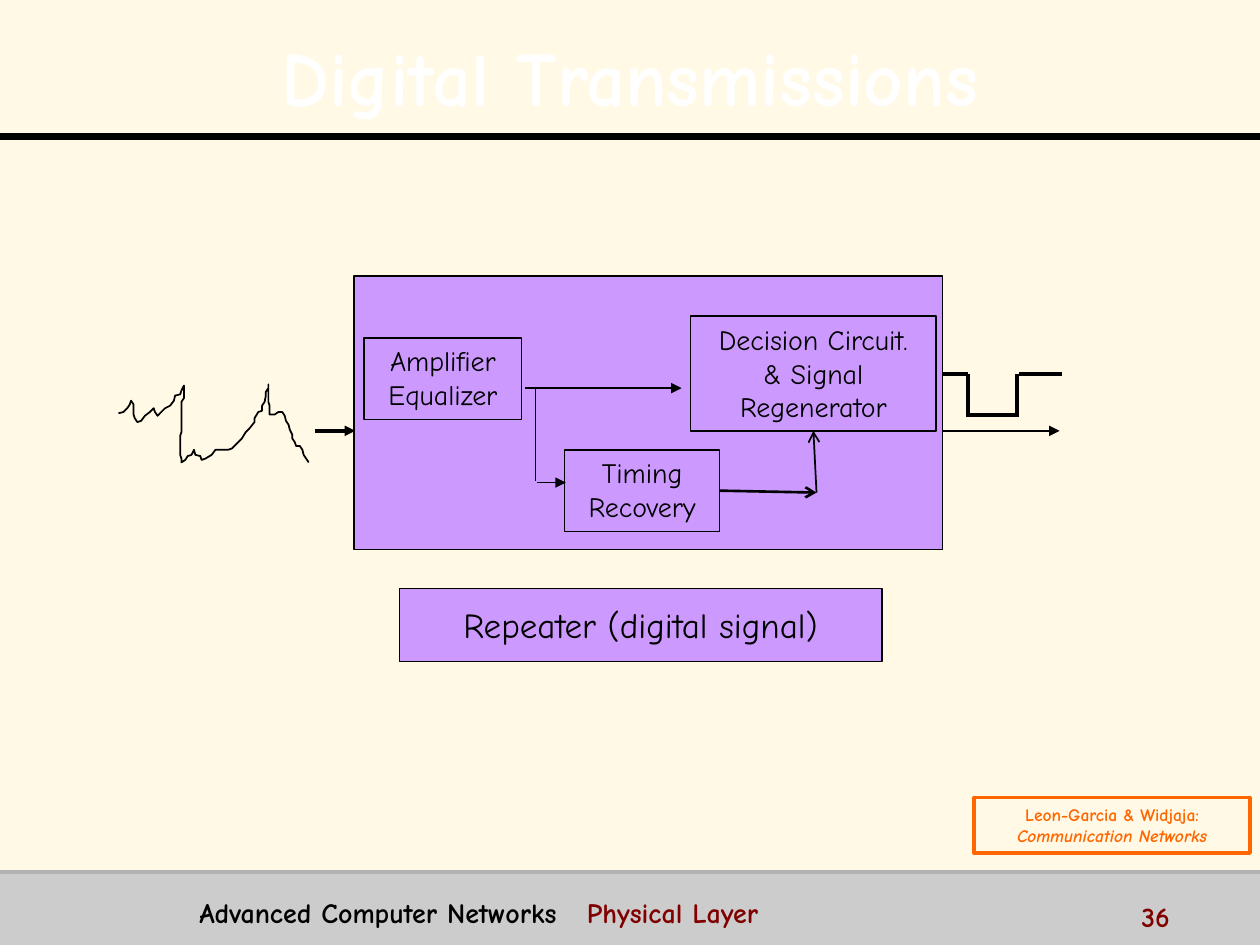
from lxml import etree
from pptx import Presentation
from pptx.dml.color import RGBColor
from pptx.enum.shapes import MSO_CONNECTOR, MSO_SHAPE
from pptx.enum.text import MSO_ANCHOR, PP_ALIGN
from pptx.oxml.ns import qn
from pptx.util import Pt

RECT, STRAIGHT = MSO_SHAPE.RECTANGLE, MSO_CONNECTOR.STRAIGHT
TOP, MIDDLE = MSO_ANCHOR.TOP, MSO_ANCHOR.MIDDLE
LEFT, CENTER = PP_ALIGN.LEFT, PP_ALIGN.CENTER
BOTTOM_SIDE, RIGHT_SIDE = 2, 3
FONT = "Comic Neue"
BLACK, WHITE, LILAC, MAROON, ORANGE = "000000", "FFFFFF", "CC99FF", "800000", "FF6600"

# Boxes: left, top, width, height
REPEATER = (202.3, 157.7, 336.2, 156.2)
AMPLIFIER = (208.1, 193, 90, 46.8), ["Amplifier", "Equalizer"]
TIMING = (322.6, 257, 88.6, 46.8), ["Timing", "Recovery"]
DECISION = (394.6, 180.7, 140.4, 65.5), ["Decision Circuit.", "& Signal", "Regenerator"]
CAPTION = (228.2, 336.2, 275.8, 41.8), ["Repeater (digital signal)"]
CITATION = (556.6, 455.8, 157.7, 31.7), ["Leon-Garcia & Widjaja:", "Communication Networks"]

# Lines: x1, y1, x2, y2, weight, arrowhead
SIGNAL_LINES = [
    (180, 246.2, 203, 246.2, 2, "triangle"),
    (528.5, 246.2, 605.5, 246.2, 1, "triangle"),
    (528.5, 213.8, 553, 213.8, 2.25, None),
    (553, 213.8, 553, 238.3, 2.25, None),
    (553, 236.9, 582.5, 236.9, 2.25, None),
    (581, 213.8, 581, 238.3, 2.25, None),
    (582.5, 213.8, 607, 213.8, 2.25, None),
]
INNER_LINES = [
    (300.2, 221.8, 389.5, 221.8, 1, "triangle"),
    (306, 221.8, 306, 275, 1, None),
    (306.7, 275.8, 323.3, 275.8, 1, "triangle"),
]
TIMING_CORNER = (466.6, 281.5)

# Noisy input signal, on a grid of 0.72 pt
NOISE_UNIT = 0.72
NOISE = [
    (94, 328), (98, 327), (101, 324), (103, 321), (104, 318), (106, 321), (106, 324),
    (106, 329), (107, 332), (109, 335), (112, 334), (115, 330), (119, 327), (122, 324),
    (123, 327), (125, 330), (128, 327), (131, 324), (135, 322), (138, 318), (139, 314),
    (143, 313), (144, 310), (146, 306), (146, 316), (144, 319), (144, 343), (143, 346),
    (143, 361), (144, 364), (144, 367), (147, 365), (149, 362), (152, 361), (154, 357),
    (155, 361), (159, 362), (160, 365), (163, 364), (168, 361), (171, 357), (181, 357),
    (184, 356), (187, 353), (192, 348), (195, 343), (198, 340), (202, 335), (202, 332),
    (205, 327), (208, 326), (208, 322), (210, 319), (211, 314), (211, 311), (213, 308),
    (213, 305), (213, 319), (214, 322), (214, 329), (218, 329), (221, 327), (224, 327),
    (226, 330), (227, 334), (229, 337), (230, 341), (232, 345), (232, 348), (234, 351),
    (235, 354), (238, 354), (240, 357), (241, 361), (243, 364), (245, 367),
]


def rgb(hex_code):
    return RGBColor.from_string(hex_code)


def set_font(font, size, color, bold=False):
    font.name, font.size, font.bold = FONT, Pt(size), bold
    font.color.rgb = rgb(color)


def add_box(place, fill=None, line=None, weight=1):
    box = shapes.add_shape(RECT, *map(Pt, place))
    box.shadow.inherit = False
    if fill:
        box.fill.solid()
        box.fill.fore_color.rgb = rgb(fill)
    else:
        box.fill.background()
    if line:
        box.line.color.rgb = rgb(line)
        box.line.width = Pt(weight)
    else:
        box.line.fill.background()
    return box


def write(shape, lines, size, color, bold=False, align=CENTER, anchor=TOP, wrap=True):
    frame = shape.text_frame
    frame.word_wrap, frame.vertical_anchor = wrap, anchor
    frame.text = "\n".join(lines)
    for paragraph in frame.paragraphs:
        paragraph.alignment = align
        for run in paragraph.runs:
            set_font(run.font, size, color, bold)
    return frame


def add_block(block):
    place, lines = block
    box = add_box(place, line=BLACK)
    write(box, lines, 16, BLACK)
    return box


def add_line(x1, y1, x2, y2, weight, head=None, color=BLACK):
    line = shapes.add_connector(STRAIGHT, Pt(x1), Pt(y1), Pt(x2), Pt(y2))
    line.line.color.rgb = rgb(color)
    line.line.width = Pt(weight)
    if head:
        etree.SubElement(line.line._get_or_add_ln(), qn("a:tailEnd"), type=head)
    etree.SubElement(line._element.spPr, qn("a:effectLst"))
    return line


def add_text_shadow(run):
    effects = etree.Element(qn("a:effectLst"))
    shadow = etree.SubElement(effects, qn("a:outerShdw"), dist="25400", dir="2700000")
    etree.SubElement(shadow, qn("a:srgbClr"), val=BLACK)
    run.font._element.find(qn("a:solidFill")).addnext(effects)


prs = Presentation()
prs.slide_width, prs.slide_height = Pt(720), Pt(540)
slide = prs.slides.add_slide(prs.slide_layouts[5])
shapes = slide.shapes
slide.background.fill.solid()
slide.background.fill.fore_color.rgb = rgb("FFF9E6")

# Header and footer bands
add_box((0, 498.2, 720, 41.8), fill="CCCCCC")
add_line(0, 77.75, 720, 77.75, 4)
add_line(0, 498.2, 720, 498.2, 2, color="B2B2B2")

title = shapes.title
title.left, title.top, title.width, title.height = map(Pt, (14.4, 9.4, 691.2, 62.6))
heading = write(title, ["Digital Transmissions"], 44, WHITE, bold=True, anchor=MIDDLE).paragraphs[0]
heading.line_spacing = 1.1
add_text_shadow(heading.runs[0])

# Signals around the repeater
start, *rest = NOISE
noise = shapes.build_freeform(*start, scale=Pt(NOISE_UNIT))
noise.add_line_segments(rest, close=False)
wave = noise.convert_to_shape()
wave.shadow.inherit = False
wave.fill.background()
wave.line.color.rgb = rgb(BLACK)
wave.line.width = Pt(1)
for line in SIGNAL_LINES:
    add_line(*line)

# Repeater and its parts
add_box(REPEATER, LILAC, BLACK, 0.75)
amplifier, timing, decision = map(add_block, (AMPLIFIER, TIMING, DECISION))
for line in INNER_LINES:
    add_line(*line)
clock = add_line(410.4, 280.8, *TIMING_CORNER, 1.5, "arrow")
clock.begin_connect(timing, RIGHT_SIDE)
trigger = add_line(*TIMING_CORNER, 464.4, 247, 1, "arrow")
trigger.end_connect(decision, BOTTOM_SIDE)

place, lines = CAPTION
write(add_box(place, LILAC, BLACK, 0.75), lines, 20, BLACK, anchor=MIDDLE, wrap=False)

place, lines = CITATION
citation = write(add_box(place, line=ORANGE, weight=2), lines, 10, ORANGE, bold=True, anchor=MIDDLE)
citation.paragraphs[1].runs[0].font.italic = True

# Footer
course = shapes.add_textbox(Pt(106.8), Pt(508.3), Pt(519), Pt(22.3))
footer = write(course, ["Advanced Computer Networks\t"], 16, BLACK, bold=True, align=LEFT).paragraphs[0]
tabs = etree.SubElement(footer._p.get_or_add_pPr(), qn("a:tabLst"))
etree.SubElement(tabs, qn("a:tab"), pos=str(Pt(221.5)), algn="l")
topic = footer.add_run()
topic.text = "Physical Layer"
set_font(topic.font, 16, MAROON, bold=True)

number = shapes.add_textbox(Pt(645.1), Pt(510.5), Pt(72), Pt(18))
write(number, ["36"], 16, MAROON, bold=True, align=LEFT)

prs.save("out.pptx")
